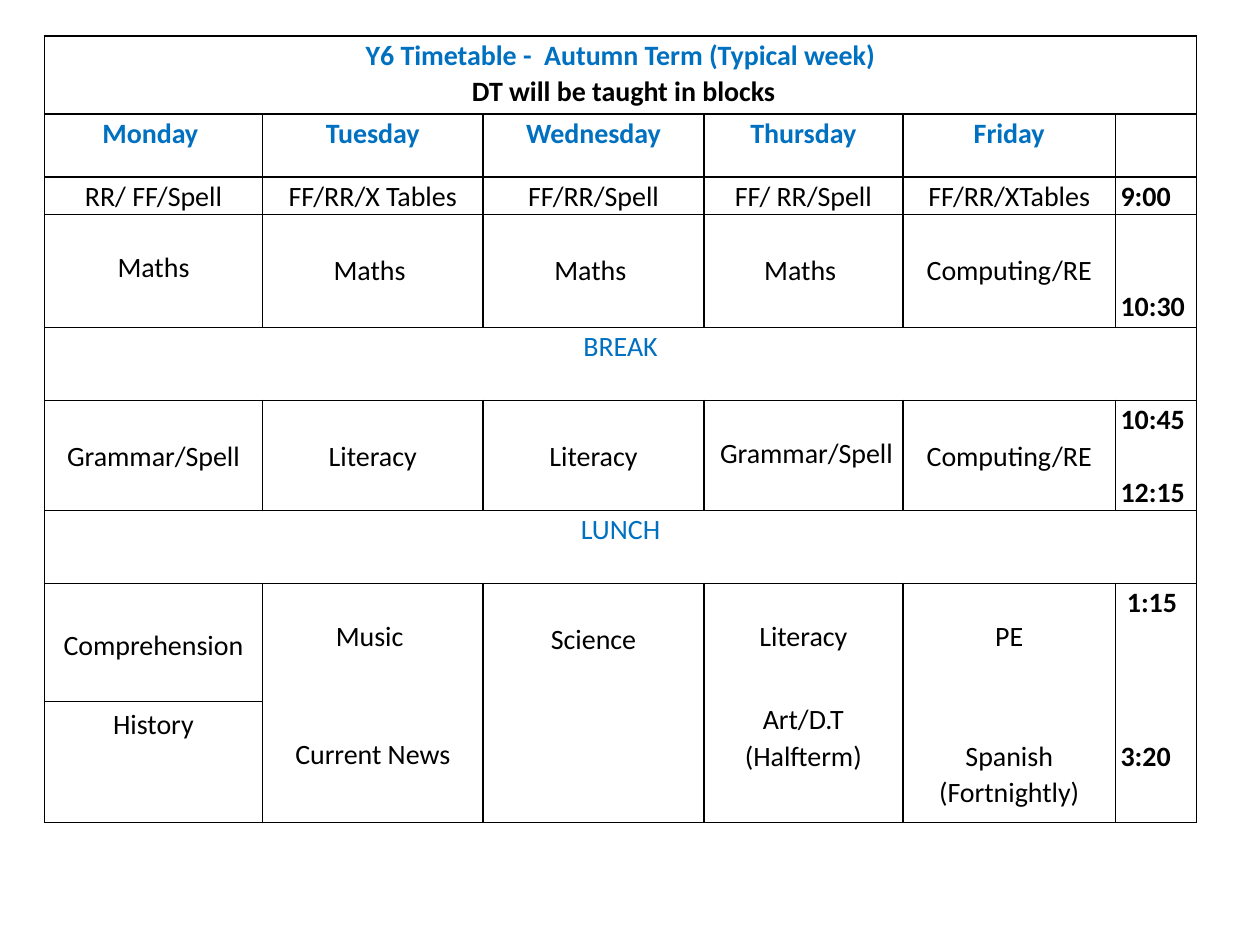
from lxml import etree
from pptx import Presentation
from pptx.dml.color import RGBColor
from pptx.enum.text import PP_ALIGN
from pptx.oxml.ns import qn
from pptx.util import Cm, Pt

BLUE = RGBColor(0x00, 0x70, 0xC0)
BLACK = RGBColor(0x00, 0x00, 0x00)
WHITE = RGBColor(0xFF, 0xFF, 0xFF)

COLUMN_WIDTHS = [4.39, 4.45, 4.45, 4.01, 4.29, 1.63]
ROW_HEIGHTS = [1.57, 1.27, 0.75, 2.28, 1.47, 2.22, 1.47, 2.36, 0.01, 0.01, 2.44]
TIME_COLUMN = len(COLUMN_WIDTHS) - 1
LAST_ROW = len(ROW_HEIGHTS) - 1
AFTERNOON_ROW = 7

# Merged regions: top row, left column, bottom row, right column
REGIONS = [(row, 0, row, TIME_COLUMN) for row in (0, 4, 6)]
REGIONS += [(7, 0, 9, 0), (7, 1, 8, 1), (9, 1, 10, 1), (7, 2, 10, 2)]
REGIONS += [(8, column, 10, column) for column in (3, 4, 5)]

# Full rows of lessons: row, texts, space above each text in cm
LESSON_ROWS = [
    (1, ["Monday ", "Tuesday", "Wednesday", "Thursday", "Friday"], [0] * 5),
    (2, ["RR/ FF/Spell", "FF/RR/X Tables", "FF/RR/Spell", "FF/ RR/Spell",
         "FF/RR/XTables", "9:00"], [0] * 6),
    (3, ["Maths", "Maths ", "Maths ", "Maths ", "Computing/RE", "10:30"],
     [0.69, 0.74, 0.74, 0.74, 0.74, 1.48]),
    (5, ["Grammar/Spell", "Literacy", "Literacy", " Grammar/Spell",
         "Computing/RE", "10:45\n12:15"], [0.74, 0.74, 0.74, 0.69, 0.74, 0]),
    (7, ["Comprehension", "Music ", "Science", "Literacy", "PE", " 1:15"],
     [0.87, 0.69, 0.74, 0.69, 0.69, 0]),
]
# Single entries: row, column, text, space above in cm
ENTRIES = [
    (0, 0, "Y6 Timetable -  Autumn Term (Typical week)\n DT will be taught in blocks", 0),
    (4, 0, "BREAK", 0),
    (6, 0, "LUNCH", 0),
    (8, 3, "Art/D.T\n(Halfterm)", 0),
    (8, 4, "Spanish\n(Fortnightly)", 0.74),
    (8, TIME_COLUMN, "3:20", 0.74),
    (9, 1, "Current News", 0.69),
    (10, 0, "History", 0.09),
]
for row, texts, spaces in LESSON_ROWS:
    for column, (text, space) in enumerate(zip(texts, spaces)):
        ENTRIES.append((row, column, text, space))


def add_border(cell, side, visible):
    properties = cell._tc.get_or_add_tcPr()
    line = etree.SubElement(properties, qn("a:ln" + side), w=str(Pt(1)))
    if visible:
        fill = etree.SubElement(line, qn("a:solidFill"))
        etree.SubElement(fill, qn("a:srgbClr"), val=str(BLACK))
    else:
        etree.SubElement(line, qn("a:noFill"))


presentation = Presentation()
presentation.slide_width = Cm(25.4)
presentation.slide_height = Cm(19.05)
slide = presentation.slides.add_slide(presentation.slide_layouts[6])
slide.background.fill.solid()
slide.background.fill.fore_color.rgb = WHITE

# Timetable grid
shape = slide.shapes.add_table(
    len(ROW_HEIGHTS), len(COLUMN_WIDTHS), Cm(0.9), Cm(0.73),
    Cm(sum(COLUMN_WIDTHS)), Cm(sum(ROW_HEIGHTS)))
table = shape.table
table.first_row = False
table.horz_banding = False
for column, width in enumerate(COLUMN_WIDTHS):
    table.columns[column].width = Cm(width)
for row, height in enumerate(ROW_HEIGHTS):
    table.rows[row].height = Cm(height)

region_of = {}
for region in REGIONS:
    top, left, bottom, right = region
    table.cell(top, left).merge(table.cell(bottom, right))
    for row in range(top, bottom + 1):
        for column in range(left, right + 1):
            region_of[row, column] = region

# Borders and fill: afternoon lessons are divided only under Monday
for row in range(len(ROW_HEIGHTS)):
    for column in range(len(COLUMN_WIDTHS)):
        cell = table.cell(row, column)
        top, left, bottom, right = region_of.get((row, column), (row, column, row, column))
        origin = (row, column) == (top, left)
        line_above = top <= AFTERNOON_ROW or column == 0
        line_below = bottom < AFTERNOON_ROW or bottom == LAST_ROW or column == 0
        add_border(cell, "L", column == left)
        add_border(cell, "R", origin or column == right)
        add_border(cell, "T", row == top and line_above)
        add_border(cell, "B", (origin or row == bottom) and line_below)
        cell.fill.solid()
        cell.fill.fore_color.rgb = WHITE

# Lessons, headings and times
for row, column, text, space in ENTRIES:
    cell = table.cell(row, column)
    cell.margin_left = cell.margin_right = Cm(0.1)
    cell.margin_top = Cm(space)
    cell.margin_bottom = 0
    is_time = column == TIME_COLUMN
    for index, line in enumerate(text.split("\n")):
        frame = cell.text_frame
        paragraph = frame.add_paragraph() if index else frame.paragraphs[0]
        paragraph.alignment = PP_ALIGN.LEFT if is_time else PP_ALIGN.CENTER
        paragraph.line_spacing = 1.07
        if is_time and index:
            paragraph.space_before = Pt(20.9)
        run = paragraph.add_run()
        run.text = line
        run.font.name = "Calibri"
        run.font.size = Pt(16)
        run.font.bold = is_time or row in (0, 1)
        run.font.color.rgb = BLUE if row in (0, 1, 4, 6) and not index else BLACK

presentation.save("out.pptx")
